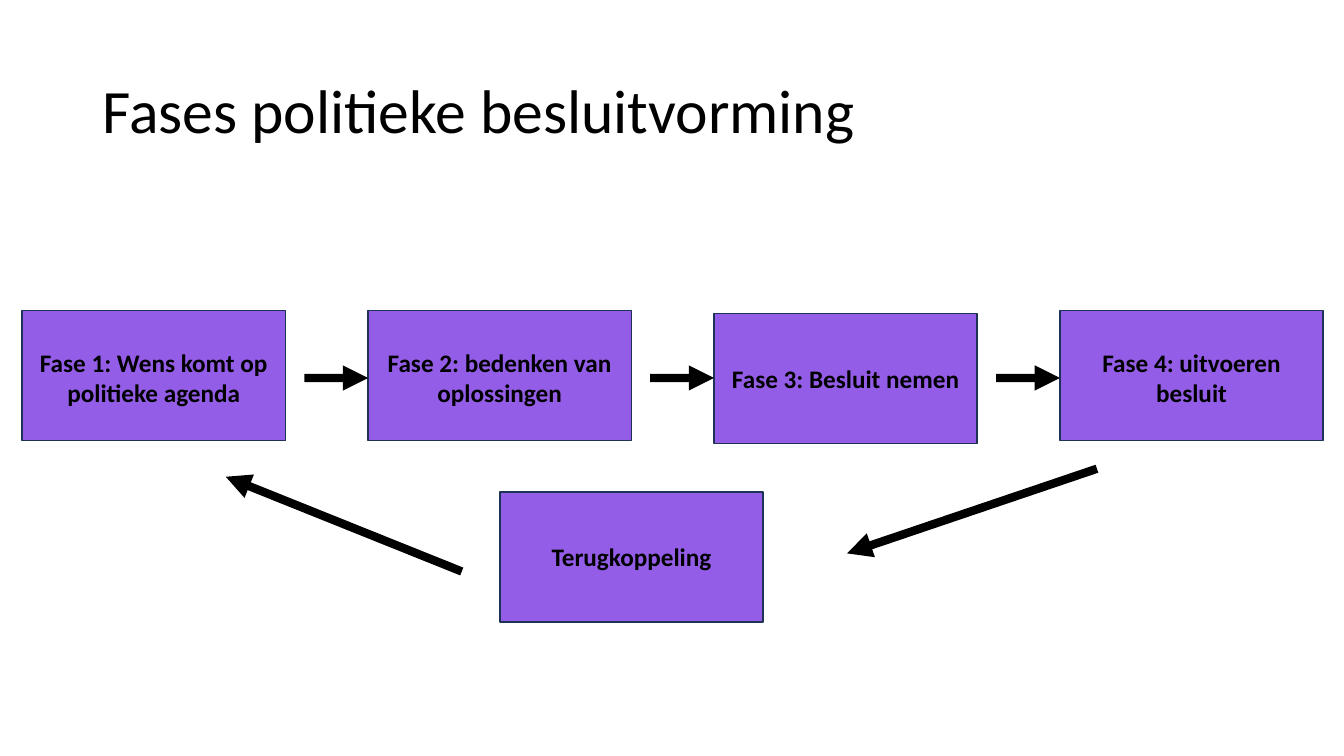
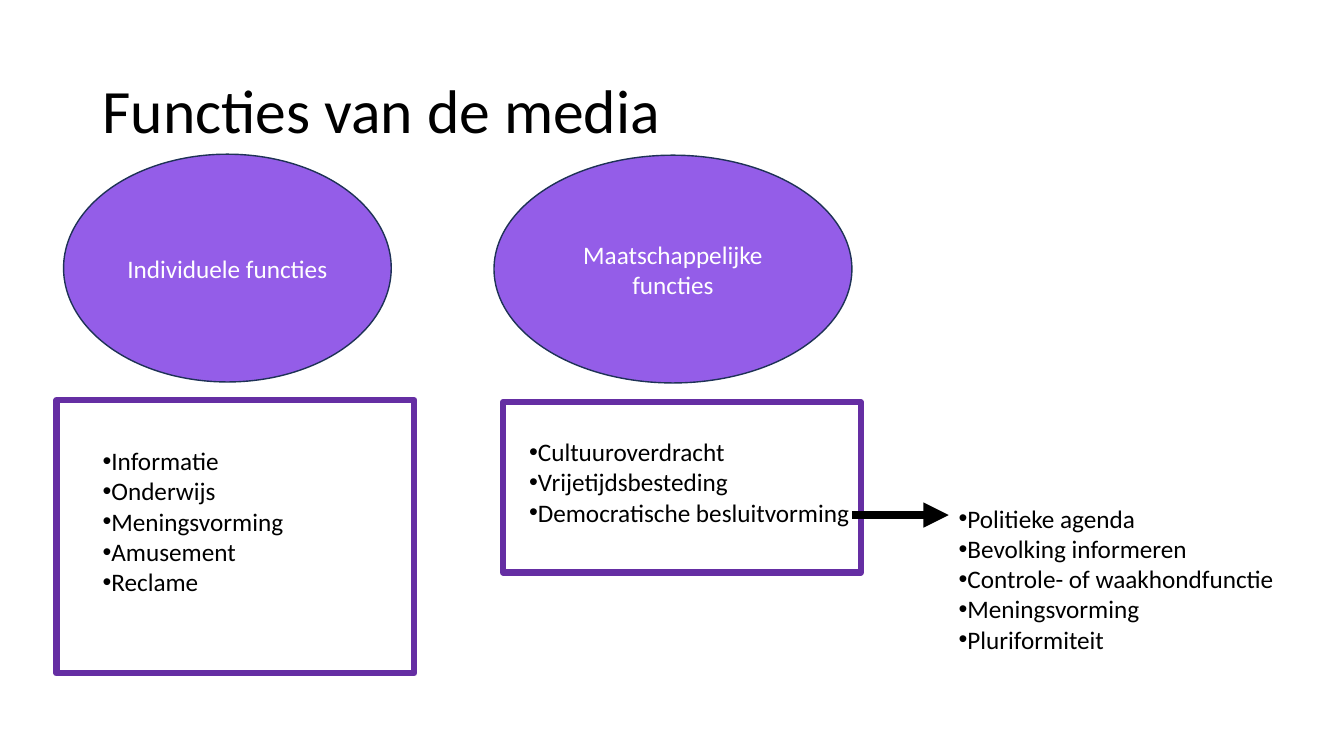
"""Build two slides on political decision making and the functions of the media."""
from lxml import etree
from pptx import Presentation, util as u
from pptx.dml.color import RGBColor
from pptx.enum import shapes, text
from pptx.oxml.ns import qn

FONT = "Calibri"
BLACK, WHITE = "000000", "FFFFFF"
PURPLE, DEEP_PURPLE, NAVY = "945DE8", "652EA3", "1E3256"
CENTER, LEFT = text.PP_ALIGN.CENTER, text.PP_ALIGN.LEFT
TOP, MIDDLE = text.MSO_ANCHOR.TOP, text.MSO_ANCHOR.MIDDLE
RECTANGLE, OVAL = shapes.MSO_SHAPE.RECTANGLE, shapes.MSO_SHAPE.OVAL

deck = Presentation()
deck.slide_width, deck.slide_height = u.Inches(13.33), u.Inches(7.5)
column, row = deck.slide_width / 100, deck.slide_height / 100


def add_box(page, area, lines=(), kind=None, fill=None, line=NAVY, weight=1, size=18,
            color=BLACK, bold=False, align=CENTER, anchor=TOP, spacing=1, bullet=None, wrap=True):
    """Add a shape, or a text box when no kind is given; area is in percent of the slide."""
    left, top, width, height = area
    place = [int(n) for n in (left * column, top * row, width * column, height * row)]
    if kind is None:
        box = page.shapes.add_textbox(*place)
    else:
        box = page.shapes.add_shape(kind, *place)
        box.shadow.inherit = False
        box.line.color.rgb = RGBColor.from_string(line)
        box.line.width = u.Pt(weight)
        if fill:
            box.fill.solid()
            box.fill.fore_color.rgb = RGBColor.from_string(fill)
        else:
            box.fill.background()
    frame = box.text_frame
    frame.word_wrap, frame.vertical_anchor = wrap, anchor
    for index, words in enumerate(lines):
        para = frame.add_paragraph() if index else frame.paragraphs[0]
        para.alignment, para.line_spacing = align, spacing
        if bullet:
            props = para._p.get_or_add_pPr()
            etree.SubElement(props, qn("a:buFont")).set("typeface", "Arial")
            etree.SubElement(props, qn("a:buChar")).set("char", bullet)
        span = para.add_run()
        span.text = words
        span.font.name, span.font.size, span.font.bold = FONT, u.Pt(size), bold
        span.font.color.rgb = RGBColor.from_string(color)
    return box


def add_arrow(page, start, end, target=None):
    """Add a thick black arrow, joined to the left side of the target if there is one."""
    ends = [int(n) for x, y in (start, end) for n in (x * column, y * row)]
    arrow = page.shapes.add_connector(shapes.MSO_CONNECTOR.STRAIGHT, *ends)
    arrow.line.color.rgb = RGBColor.from_string(BLACK)
    arrow.line.width = u.Pt(6)
    etree.SubElement(arrow.line._get_or_add_ln(), qn("a:tailEnd")).set("type", "triangle")
    etree.SubElement(arrow._element.spPr, qn("a:effectLst"))
    if target is not None:
        arrow.end_connect(target, 1)


pages = []
for title in ("Fases politieke besluitvorming", "Functies van de media"):
    page = deck.slides.add_slide(deck.slide_layouts[6])
    add_box(page, (6.9, 5.33, 86.27, 19.33), [title], size=44, align=LEFT,
            anchor=MIDDLE, spacing=0.9)
    pages.append(page)
phases, media = pages

phase_width, phase_height, pitch = 19.58, 17.2, 25.74
one_line, two_lines = 5.33, 9.47
steps = [
    (1.65, 41.07, 50, two_lines, "Fase 1: Wens komt op politieke agenda"),
    (1.65 + pitch, 41.07, 50, two_lines, "Fase 2: bedenken van oplossingen"),
    (1.65 + 2 * pitch, 41.47, 50, one_line, "Fase 3: Besluit nemen"),
    (1.65 + 3 * pitch, 41.07, 50, two_lines, "Fase 4: uitvoeren besluit"),
    (37.2, 65.07, 73.6, one_line, "Terugkoppeling"),
]
captions = []
for left, top, middle, height, words in steps:
    add_box(phases, (left, top, phase_width, phase_height), kind=RECTANGLE, fill=PURPLE)
    captions.append(add_box(phases, (left, middle - height / 2, phase_width, height),
                            [words], bold=True))
for step, caption in zip(steps[1:4], captions[1:4]):
    add_arrow(phases, (step[0] - 4.75, 50), (step[0], 50), caption)
add_arrow(phases, (81.62, 62), (63.02, 73.2))
add_arrow(phases, (34.36, 75.6), (16.8, 63.07))

for area, words in [((4.73, 20.4, 24.38, 30.13), "Individuele functies"),
                    ((36.76, 20.53, 26.63, 30.13), "Maatschappelijke functies")]:
    add_box(media, area, [words], kind=OVAL, fill=PURPLE, color=WHITE, anchor=MIDDLE)
for area in [(4.2, 52.93, 26.63, 36.13), (37.43, 53.2, 26.63, 22.53)]:
    add_box(media, area, kind=RECTANGLE, line=DEEP_PURPLE, weight=4.5)
for area, wrap, items in [
    ((6.9, 58.27, 29.11, 25.6), True,
     ["Informatie", "Onderwijs", "Meningsvorming", "Amusement", "Reclame"]),
    ((38.63, 57.07, 25.58, 17.47), False,
     ["Cultuuroverdracht", "Vrijetijdsbesteding", "Democratische besluitvorming"]),
    ((70.59, 65.87, 25.21, 25.6), False,
     ["Politieke agenda", "Bevolking informeren", "Controle- of waakhondfunctie",
      "Meningsvorming", "Pluriformiteit"]),
]:
    add_box(media, area, items, align=LEFT, bullet="•", wrap=wrap)
add_arrow(media, (63.39, 68.13), (70.59, 68.13))

deck.save("out.pptx")
